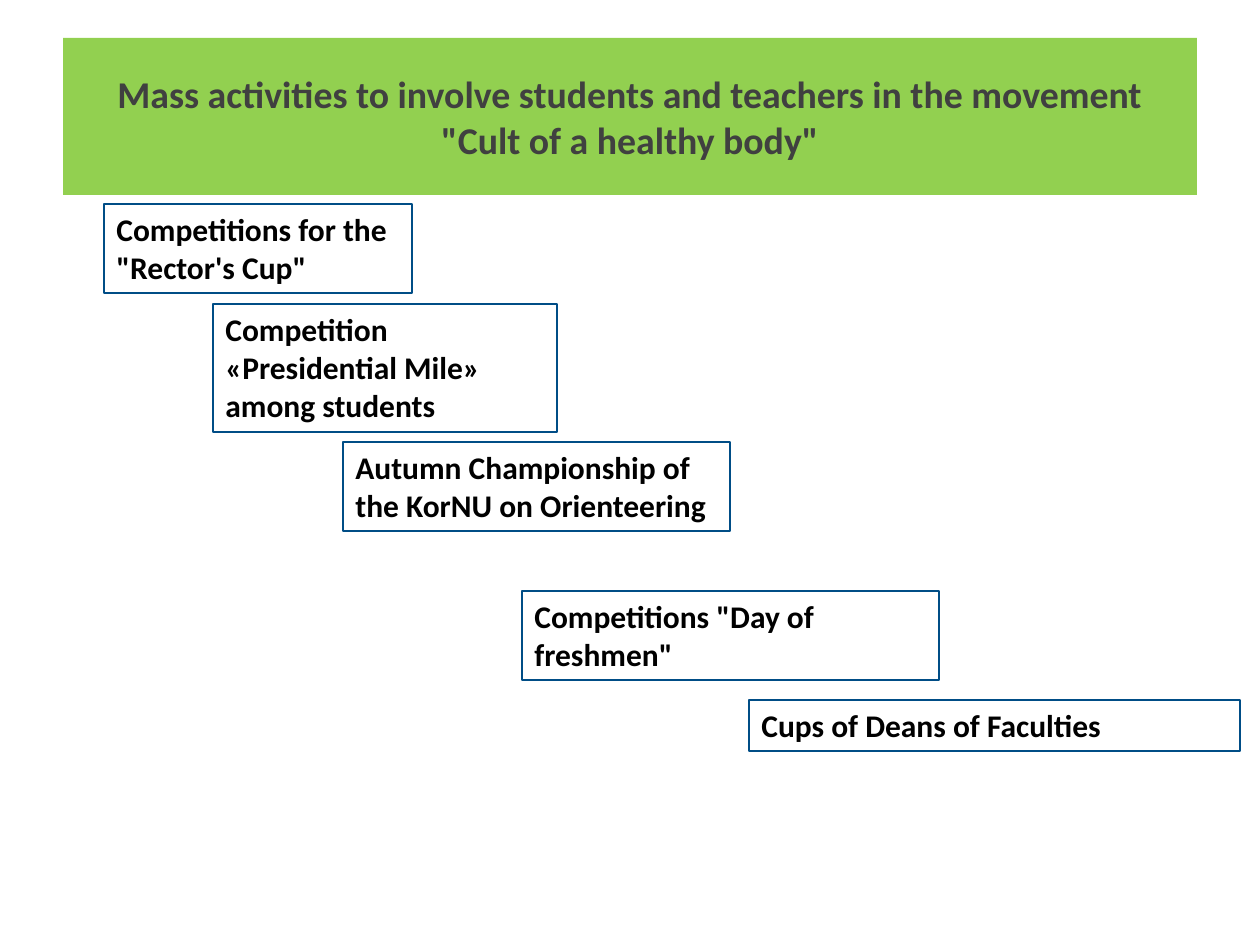
from pptx import Presentation
from pptx import util as u
from pptx.dml.color import RGBColor
from pptx.enum import text

PX = u.Inches(1) // 126


def color(hex_code):
    return RGBColor.from_string(hex_code)


def write(frame, words, size, ink, align, anchor):
    frame.word_wrap = True
    frame.vertical_anchor = anchor
    para = frame.paragraphs[0]
    para.alignment = align
    span = para.add_run()
    span.text = words
    span.font.name = "Calibri"
    span.font.size = u.Pt(size)
    span.font.bold = True
    span.font.color.rgb = color(ink)


deck = Presentation()
deck.slide_width, deck.slide_height = u.Inches(10), u.Inches(7.5)
page = deck.slides.add_slide(deck.slide_layouts[5])

# Title band
title = page.shapes.title
title.left, title.top, title.width, title.height = (n * PX for n in (63, 38, 1134, 157))
title.fill.solid()
title.fill.fore_color.rgb = color("92D050")
title.text_frame.auto_size = text.MSO_AUTO_SIZE.NONE
write(title.text_frame,
      'Mass activities to involve students and teachers in the movement "Cult of a healthy body"',
      size=21.6, ink="404040", align=text.PP_ALIGN.CENTER, anchor=text.MSO_ANCHOR.MIDDLE)

# Staircase of activities: left, top, width, height, wording
activities = [
    (104, 204, 308, 89, 'Competitions for the "Rector\'s Cup"'),
    (213, 304, 344, 128, "Competition «Presidential Mile» among students"),
    (343, 442, 387, 89, "Autumn Championship of the KorNU on Orienteering"),
    (522, 591, 417, 89, 'Competitions "Day of freshmen"'),
    (749, 700, 491, 51, "Cups of Deans of Faculties"),
]
for left, top, width, height, words in activities:
    box = page.shapes.add_textbox(left * PX, top * PX, width * PX, height * PX)
    box.line.color.rgb = color("004D86")
    box.line.width = u.Pt(0.75)
    box.text_frame.auto_size = text.MSO_AUTO_SIZE.SHAPE_TO_FIT_TEXT
    write(box.text_frame, words, size=18, ink="000000",
          align=text.PP_ALIGN.LEFT, anchor=text.MSO_ANCHOR.TOP)

deck.save("out.pptx")
